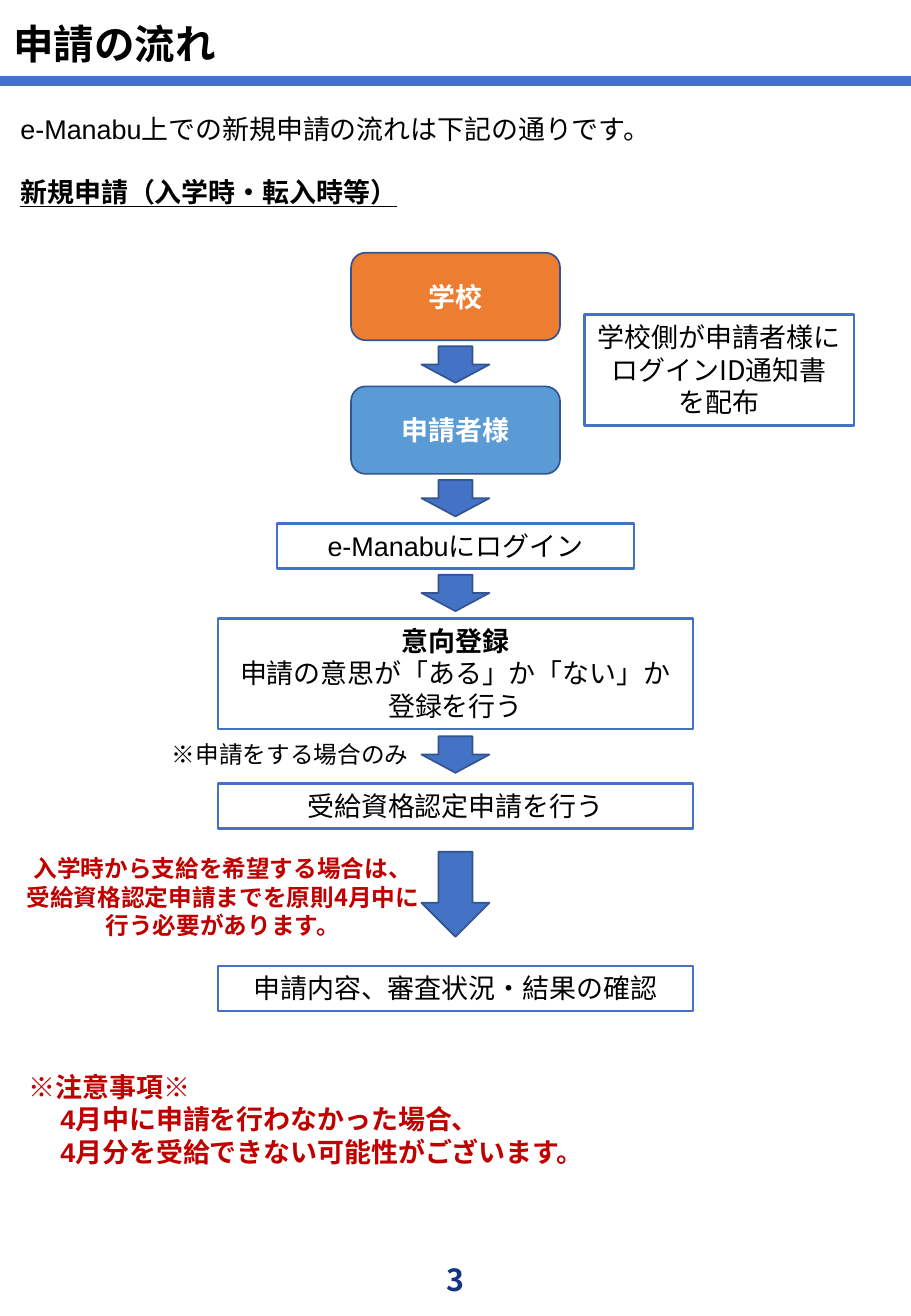
from lxml.etree import SubElement
from pptx import Presentation
from pptx.dml.color import RGBColor
from pptx.enum.shapes import MSO_CONNECTOR, MSO_SHAPE
from pptx.enum.text import MSO_ANCHOR, MSO_AUTO_SIZE, PP_ALIGN
from pptx.oxml.ns import qn
from pptx.util import Inches, Pt

COLORS = {
    "text": "000000", "white": "FFFFFF", "blue": "4472C4", "outline": "325491",
    "school": "ED7D31", "applicant": "5B9BD5", "warning": "C00000", "number": "113582",
}
JAPANESE = "Noto Sans CJK JP"
LATIN = "Arial"
WIDTH, HEIGHT = 7.5, 10.83


def color(name):
    return RGBColor.from_string(COLORS[name])


def write(shape, lines, size=16, font=JAPANESE, ink="text", bold=False,
          align=PP_ALIGN.CENTER, anchor=MSO_ANCHOR.TOP):
    frame = shape.text_frame
    frame.word_wrap = True
    frame.vertical_anchor = anchor
    frame.text = "\n".join(lines)
    for paragraph in frame.paragraphs:
        paragraph.alignment = align
        paragraph.font.size = Pt(size)
        paragraph.font.name = font
        paragraph.font.bold = bold
        paragraph.font.color.rgb = color(ink)
        SubElement(paragraph.font._element, qn("a:ea"), typeface=JAPANESE)
    return frame.paragraphs


def add_text(slide, left, top, width, height, lines, **style):
    box = slide.shapes.add_textbox(Inches(left), Inches(top), Inches(width), Inches(height))
    return write(box, lines, **style)


def add_block(slide, kind, left, top, width, height, fill, line, line_width):
    shape = slide.shapes.add_shape(
        kind, Inches(left), Inches(top), Inches(width), Inches(height))
    shape.shadow.inherit = False
    shape.fill.solid()
    shape.fill.fore_color.rgb = color(fill)
    shape.line.color.rgb = color(line)
    shape.line.width = Pt(line_width)
    return shape


def add_role(slide, left, top, width, height, name, fill):
    shape = add_block(slide, MSO_SHAPE.ROUNDED_RECTANGLE, left, top, width, height,
                      fill, "outline", 1)
    write(shape, [name], ink="white", bold=True, anchor=MSO_ANCHOR.MIDDLE)


def add_step(slide, left, top, width, height, lines, font=JAPANESE):
    shape = add_block(slide, MSO_SHAPE.RECTANGLE, left, top, width, height,
                      "white", "blue", 1.5)
    paragraphs = write(shape, lines, font=font)
    shape.text_frame.auto_size = MSO_AUTO_SIZE.SHAPE_TO_FIT_TEXT
    return paragraphs


def add_header(slide, left, top, width):
    add_text(slide, left + 0.01, top + 0.11, 4.75, 0.5, ["申請の流れ"],
             size=24, font=LATIN, bold=True, align=PP_ALIGN.LEFT)
    rule = slide.shapes.add_connector(
        MSO_CONNECTOR.STRAIGHT, Inches(left), Inches(top + 0.67),
        Inches(left + width), Inches(top + 0.67))
    rule.line.color.rgb = color("blue")
    rule.line.width = Pt(6)
    SubElement(rule._element.spPr, qn("a:effectLst"))


def add_intro(slide, left, top, width, height):
    lead, heading = add_text(
        slide, left, top, width, height,
        ["e-Manabu上での新規申請の流れは下記の通りです。", "新規申請（入学時・転入時等）"],
        font=LATIN, align=PP_ALIGN.LEFT)
    heading.space_before = Pt(18)
    heading.font.name = JAPANESE
    heading.font.bold = True
    heading.font.underline = True


def add_flow(slide, center, top):
    role_width, role_height = 1.72, 0.72
    for offset, name, fill in [(0, "学校", "school"), (1.1, "申請者様", "applicant")]:
        add_role(slide, center - role_width / 2, top + offset, role_width, role_height,
                 name, fill)

    steps = [
        (2.23, 2.94, 0.37, ["e-Manabuにログイン"], LATIN),
        (3.01, 3.91, 0.91,
         ["意向登録", "申請の意思が「ある」か「ない」か", "登録を行う"], LATIN),
        (4.37, 3.91, 0.37, ["受給資格認定申請を行う"], JAPANESE),
        (5.87, 3.91, 0.37, ["申請内容、審査状況・結果の確認"], JAPANESE),
    ]
    for offset, width, height, lines, font in steps:
        paragraphs = add_step(slide, center - width / 2, top + offset, width, height,
                              lines, font)
        paragraphs[0].font.bold = len(lines) > 1

    arrow_width = 0.56
    for offset, height in [(0.77, 0.3), (1.87, 0.3), (2.65, 0.3), (3.98, 0.3), (4.93, 0.7)]:
        add_block(slide, MSO_SHAPE.DOWN_ARROW, center - arrow_width / 2, top + offset,
                  arrow_width, height, "blue", "outline", 1)

    add_step(slide, center + 1.06, top + 0.51, 2.22, 0.91,
             ["学校側が申請者様にログインID通知書", "を配布"])
    add_text(slide, center - 2.58, top + 3.96, 2.44, 0.34, ["※申請をする場合のみ"], size=14)
    add_text(slide, center - 3.68, top + 4.9, 3.53, 0.81,
             ["入学時から支給を希望する場合は、",
              "受給資格認定申請までを原則4月中に",
              "行う必要があります。"],
             size=14, ink="warning", bold=True)


def add_caution(slide, left, top, width, height):
    paragraphs = add_text(
        slide, left, top, width, height,
        ["※注意事項※",
         "4月中に申請を行わなかった場合、",
         "4月分を受給できない可能性がございます。"],
        font=LATIN, ink="warning", bold=True, align=PP_ALIGN.LEFT)
    for paragraph in paragraphs[1:]:
        paragraph._p.get_or_add_pPr().set("marL", str(Inches(0.26)))


def add_page_number(slide, center, top):
    width = 0.69
    add_text(slide, center - width / 2, top, width, 0.39, ["3"], size=18, ink="number",
             bold=True, anchor=MSO_ANCHOR.MIDDLE)


def main():
    presentation = Presentation()
    presentation.slide_width = Inches(WIDTH)
    presentation.slide_height = Inches(HEIGHT)
    slide = presentation.slides.add_slide(presentation.slide_layouts[6])
    add_header(slide, 0, 0, WIDTH)
    add_intro(slide, 0.07, 0.88, 7.02, 1.0)
    add_flow(slide, WIDTH / 2, 2.08)
    add_caution(slide, 0.14, 8.76, 5.5, 0.91)
    add_page_number(slide, WIDTH / 2, HEIGHT - 0.5)
    presentation.save("out.pptx")


if __name__ == "__main__":
    main()
